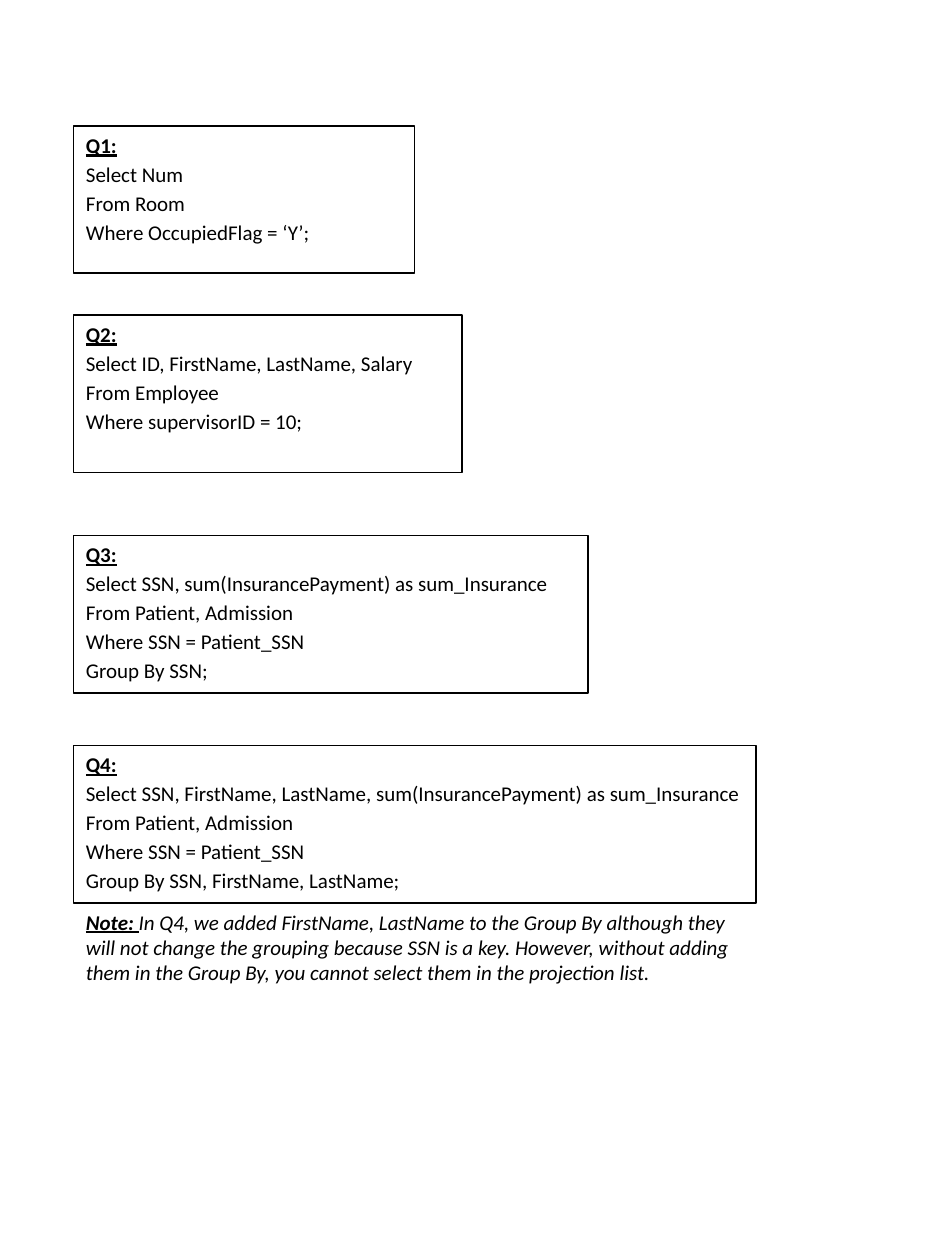
from pptx import Presentation
from pptx.dml.color import RGBColor
from pptx.enum import shapes, text
from pptx.util import Pt

BLACK = "000000"
LEFT = 42


def color(value):
    return RGBColor.from_string(value)


def add_span(para, words, heading=False, italic=False):
    span = para.add_run()
    span.text = words
    span.font.name = "Calibri"
    span.font.size = Pt(12)
    span.font.bold = heading
    span.font.underline = heading
    span.font.italic = italic
    span.font.color.rgb = color(BLACK)


deck = Presentation()
deck.slide_width = Pt(540)
deck.slide_height = Pt(720)
page = deck.slides.add_slide(deck.slide_layouts[6])

queries = [
    (72, 195, 84, "Q1:", ["Select Num", "From Room", "Where OccupiedFlag = ‘Y’;"]),
    (180, 222, 90, "Q2:", ["Select ID, FirstName, LastName, Salary", "From Employee",
                           "Where supervisorID = 10;"]),
    (306, 294, 90, "Q3:", ["Select SSN, sum(InsurancePayment) as sum_Insurance",
                           "From Patient, Admission", "Where SSN = Patient_SSN",
                           "Group By SSN;"]),
    (426, 390, 90, "Q4:", ["Select SSN, FirstName, LastName, sum(InsurancePayment) as sum_Insurance",
                           "From Patient, Admission", "Where SSN = Patient_SSN",
                           "Group By SSN, FirstName, LastName;"]),
]

for top, width, height, heading, lines in queries:
    box = page.shapes.add_shape(shapes.MSO_SHAPE.RECTANGLE,
                                Pt(LEFT), Pt(top), Pt(width), Pt(height))
    box.shadow.inherit = False
    box.fill.background()
    box.line.color.rgb = color(BLACK)
    box.line.width = Pt(0.75)
    frame = box.text_frame
    frame.word_wrap = True
    frame.vertical_anchor = text.MSO_ANCHOR.TOP
    para = frame.paragraphs[0]
    para.alignment = text.PP_ALIGN.LEFT
    add_span(para, heading, heading=True)
    for line in lines:
        para = frame.add_paragraph()
        para.alignment = text.PP_ALIGN.LEFT
        para.space_before = Pt(2.2)
        add_span(para, line)

note = page.shapes.add_textbox(Pt(LEFT), Pt(516), Pt(390), Pt(60))
note.text_frame.word_wrap = True
para = note.text_frame.paragraphs[0]
add_span(para, "Note: ", heading=True, italic=True)
add_span(para, "In Q4, we added FirstName, LastName to the Group By although they "
               "will not change the grouping because SSN is a key. However, without "
               "adding them in the Group By, you cannot select them in the projection list.",
         italic=True)

deck.save("out.pptx")
